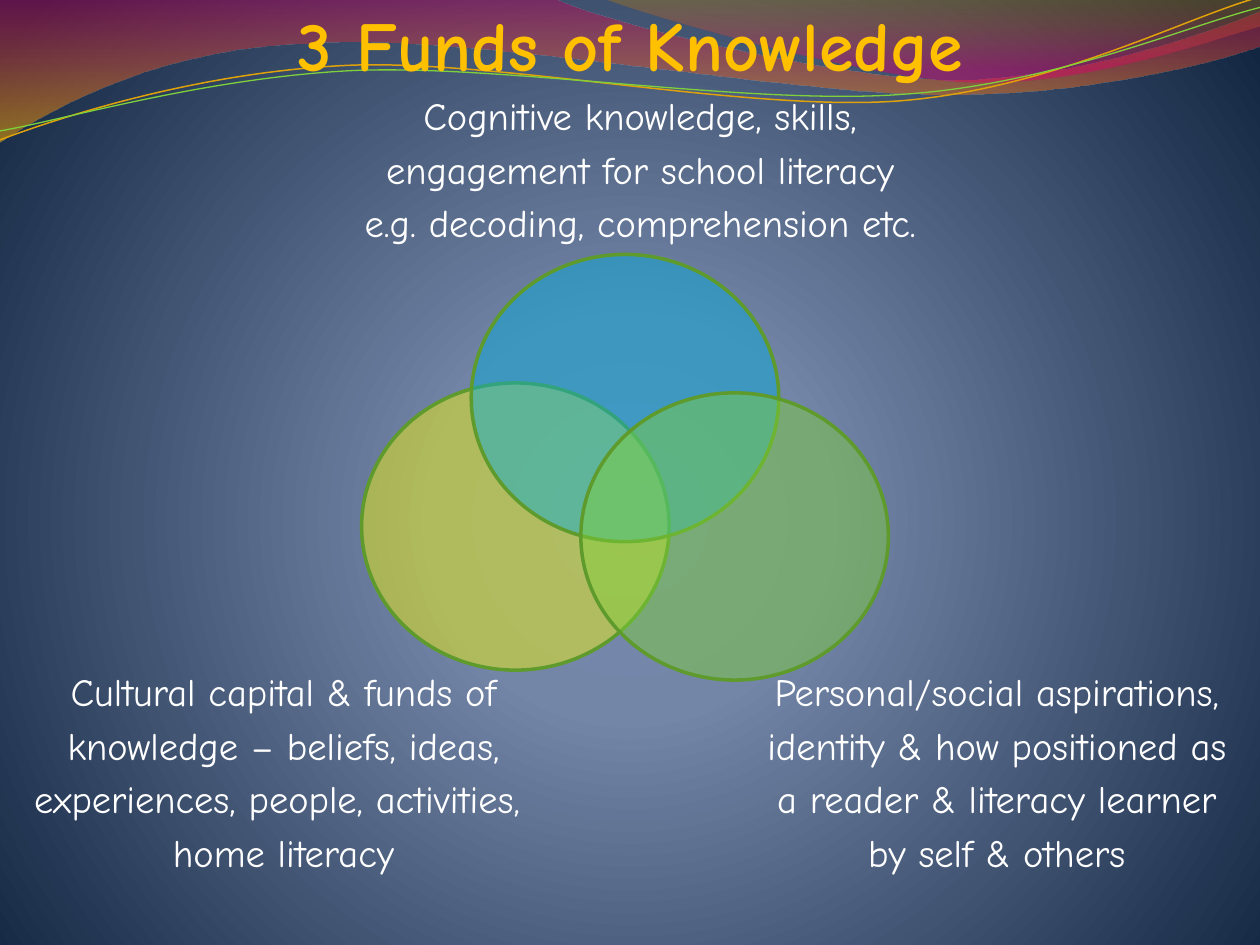
from lxml import etree
from pptx import Presentation
from pptx.dml.color import RGBColor
from pptx.enum import shapes, text
from pptx.oxml import ns
from pptx.util import Cm, Pt

WHITE = RGBColor(0xFF, 0xFF, 0xFF)
GOLD = RGBColor(0xFF, 0xC0, 0x00)
AMBER = RGBColor(0xE0, 0xA2, 0x09)
LIME = RGBColor(0x7F, 0xD1, 0x3B)
GREEN = RGBColor(0x5E, 0x9B, 0x2C)
YELLOW = RGBColor(0xFF, 0xFF, 0x00)
BLUE = RGBColor(0x00, 0xAD, 0xDC)
PINK = RGBColor(0xBD, 0x00, 0x59)
ORANGE = RGBColor(0xF0, 0xAB, 0x00)
OLIVE = RGBColor(0xC3, 0x8B, 0x00)
ROSE = RGBColor(0xE1, 0x00, 0x6B)
MIST = RGBColor(0x76, 0x8B, 0xB1)
SLATE = RGBColor(0x73, 0x86, 0xA7)
NAVY = RGBColor(0x12, 0x25, 0x41)
FONT = "Comic Neue"
UNIT = 100  # outline units per cm

# Outlines in cm: a start, then pairs for straight lines and sixes for Beziers.
WAVE = [(0, 0), (11.18, -0.03),
        (12.09, 0.43, 16.87, 1.6, 19.25, 1.6),
        (21.67, 1.6, 24.33, 0.66, 25.4, 0.23), (25.43, 0.91),
        (24.97, 1.12, 22.1, 1.93, 18.95, 1.9),
        (15.8, 1.9, 9.7, 0.71, 6.53, 0.86),
        (3.28, 0.91, 1.17, 2.11, -0.03, 2.87), (0, 0)]
CREST = [(12.17, -0.03),
         (12.93, 0.28, 17.32, 1.57, 19.53, 1.65),
         (21.74, 1.75, 24.41, 0.81, 25.4, 0.53), (25.4, 0), (12.17, -0.03)]
UPPER = [(-0.05, 2.22),
         (1.19, 1.82, 4.02, 1.04, 7.05, 1.05),
         (10.05, 1.07, 15.02, 2.37, 18.08, 2.29),
         (21.14, 2.2, 23.87, 0.91, 25.41, 0.55)]
LOWER = [(-0.04, 2.04),
         (1.16, 1.9, 4.18, 1.15, 7.2, 1.16),
         (10.25, 1.19, 15.13, 2.25, 18.19, 2.16),
         (21.21, 2.1, 23.93, 1.06, 25.45, 0.75)]

TOP = ["Cognitive knowledge, skills,",
       "engagement for school literacy",
       "e.g. decoding, comprehension etc."]
LEFT = ["Cultural capital & funds of",
        "knowledge – beliefs, ideas,",
        "experiences, people, activities, ",
        "home literacy"]
RIGHT = ["Personal/social aspirations,",
         "identity & how positioned as",
         "a reader & literacy learner",
         "by self & others"]


def add(parent, tag, **attrs):
    return etree.SubElement(parent, ns.qn(tag),
                            {k: str(v) for k, v in attrs.items()})


def fade(color, share):
    """Give a colour element its opacity in percent."""
    add(color, "a:alpha", val=share * 1000)


def blend(fill, root, stops, focus=None):
    """Fill with (position, colour, opacity) stops, downward or round a focus."""
    fill.gradient()
    grad = next(root.iter(ns.qn("a:gradFill")))
    for child in list(grad):
        grad.remove(child)
    rows = add(grad, "a:gsLst")
    for pos, color, share in stops:
        stop = add(rows, "a:gs", pos=pos * 1000)
        tint = add(stop, "a:srgbClr", val=color)
        if share < 100:
            fade(tint, share)
    if focus:
        ring = add(grad, "a:path", path="circle")
        add(ring, "a:fillToRect",
            **{side: val * 1000 for side, val in zip("ltrb", focus)})
    else:
        add(grad, "a:lin", ang=90 * 60000, scaled=1)


def outline(slide, curve, close):
    """Lay every point as a corner, then join threes into Bezier segments."""
    first, *segs = curve
    pts = [[(round(x * UNIT), round(y * UNIT))
            for x, y in zip(seg[::2], seg[1::2])] for seg in segs]
    pen = slide.shapes.build_freeform(*(round(v * UNIT) for v in first),
                                      scale=Cm(1) / UNIT)
    pen.add_line_segments([p for seg in pts for p in seg], close=close)
    shape = pen.convert_to_shape()
    shape.shadow.inherit = False
    lines = iter(list(shape.element.iter(ns.qn("a:lnTo"))))
    for seg in pts:
        parts = [next(lines) for _ in seg]
        if len(parts) == 3:
            bend = etree.Element(ns.qn("a:cubicBezTo"))
            parts[0].addprevious(bend)
            for part in parts:
                bend.append(part[0])
                part.getparent().remove(part)
    return shape


def swoosh(slide, curve, stops):
    shape = outline(slide, curve, True)
    blend(shape.fill, shape.element, stops)
    shape.line.fill.background()


def strand(slide, curve, color, width):
    shape = outline(slide, curve, False)
    shape.rotation = 357.3
    shape.fill.background()
    shape.line.color.rgb = color
    shape.line.width = Pt(width)


def circle(slide, x, y, color, share):
    shape = slide.shapes.add_shape(shapes.MSO_SHAPE.OVAL,
                                   Cm(x), Cm(y), Cm(6.2), Cm(5.79))
    shape.shadow.inherit = False
    shape.fill.solid()
    shape.fill.fore_color.rgb = color
    fade(shape.element.spPr.find(ns.qn("a:solidFill"))[0], share)
    shape.line.color.rgb = GREEN
    shape.line.width = Pt(2)


def label(slide, lines, x, y, height=2.59, size=22, color=WHITE, bold=False,
          pad=0.13, gap=20, anchor=text.MSO_ANCHOR.TOP):
    box = slide.shapes.add_textbox(Cm(x), Cm(y), Cm(21.59), Cm(height))
    frame = box.text_frame
    frame.word_wrap = True
    frame.vertical_anchor = anchor
    frame.margin_left = frame.margin_right = Cm(pad)
    frame.margin_top = frame.margin_bottom = Cm(pad)
    frame.text = "\n".join(lines)
    for para in frame.paragraphs:
        para.alignment = text.PP_ALIGN.CENTER
        if gap:
            before = add(para._p.get_or_add_pPr(), "a:spcBef")
            add(before, "a:spcPct", val=gap * 1000)
        font = para.runs[0].font
        font.name, font.size, font.bold = FONT, Pt(size), bold
        font.color.rgb = color


def main():
    prs = Presentation()
    prs.slide_width, prs.slide_height = Cm(25.4), Cm(19.05)
    slide = prs.slides.add_slide(prs.slide_layouts[6])
    blend(slide.background.fill, slide.element,
          [(0, MIST, 100), (25, SLATE, 100), (100, NAVY, 100)],
          focus=(10, 110, 10, 100))

    swoosh(slide, WAVE, [(0, PINK, 45), (100, ORANGE, 55)])
    swoosh(slide, CREST, [(0, OLIVE, 30), (80, ROSE, 45)])
    strand(slide, UPPER, AMBER, 0.85)
    strand(slide, LOWER, LIME, 0.75)

    label(slide, TOP, 2.11, 1.72)
    venn = [(7.72, YELLOW, 44), (5.13, BLUE, 46), (7.92, LIME, 47)]
    for i, (y, color, share) in enumerate(venn):
        circle(slide, 7.29 + 2.21 * i, y, color, share)
    label(slide, LEFT, -5.08, 13.33)
    label(slide, RIGHT, 9.3, 13.33)
    label(slide, ["3 Funds of Knowledge"], 1.91, -0.58, height=2.31, size=40,
          color=GOLD, bold=True, pad=0, gap=0, anchor=text.MSO_ANCHOR.BOTTOM)
    prs.save("out.pptx")


if __name__ == "__main__":
    main()
